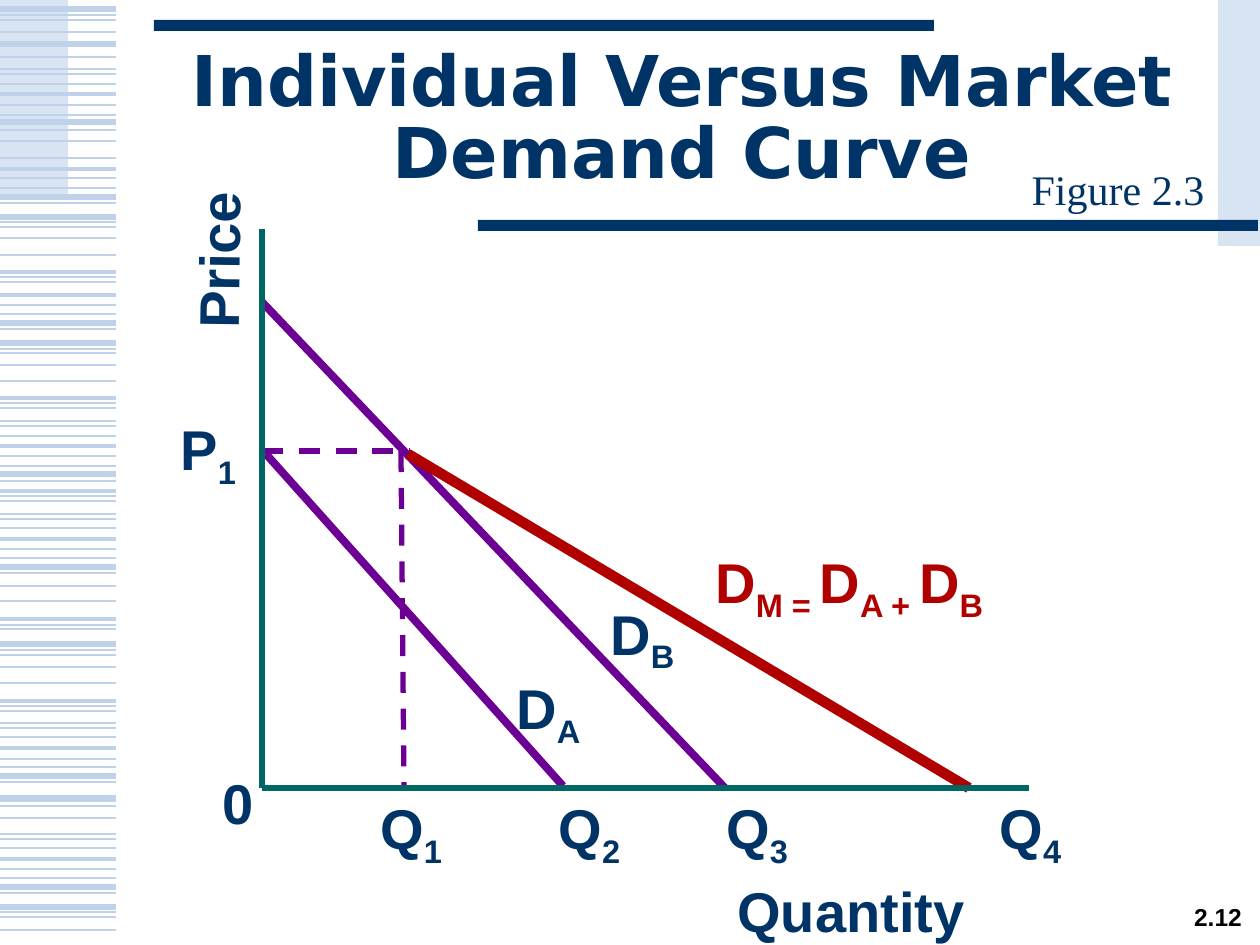
from lxml.etree import SubElement
from pptx import Presentation
from pptx.dml.color import RGBColor
from pptx.enum.dml import MSO_LINE
from pptx.enum.shapes import MSO_CONNECTOR, MSO_SHAPE
from pptx.enum.text import MSO_ANCHOR, PP_ALIGN
from pptx.oxml.ns import qn
from pptx.util import Pt

NAVY, PALE, STRIPE = "003366", "D9E4F3", "C0D2EA"
PURPLE, RED, TEAL = "6D0094", "B00000", "006666"

STRIPES = {
    3: [9, 44, 122, 197, 217, 323, 343, 474, 567, 644, 776, 798, 887, 907],
    2.25: [94, 169, 272, 295, 398, 446, 491, 539, 619, 701, 748, 859],
    1.5: [57, 74, 105, 130, 178, 203, 282, 305, 329, 408, 426, 456, 481,
          501, 519, 549, 573, 629, 711, 728, 759, 782, 839, 869, 893],
    1: [20, 32, 84, 141, 158, 227, 238, 255, 353, 365, 381, 436, 528, 586,
        601, 655, 667, 683, 737, 806, 818, 834, 848, 917, 930],
    0.75: [15, 69, 115, 188, 222, 277, 314, 349, 403, 421, 466, 496, 514,
           558, 625, 650, 706, 723, 767, 801, 878, 912],
}
BARS = [
    (0, 0, 68, 200, PALE),
    (154, 20, 780, 11, NAVY),
    (1218, 0, 42, 246, PALE),
    (478, 220, 780, 11, NAVY),
]
CURVE_LABELS = [
    (598, 588, 105, ["D", "B"], NAVY),
    (504, 662, 116, ["D", "A"], NAVY),
    (725, 866, 315, ["Quantity"], NAVY),
    (703, 536, 388, ["D", "M = ", "D", "A + ", "D", "B"], RED),
]
QUANTITY_LEFTS = [368, 546, 714, 987]


def px(n):
    """Turn pixels into EMU."""
    return round(n * 914400 / 126)


def color(value):
    """Turn a hex string into a colour."""
    return RGBColor.from_string(value)


def add_bar(shapes, x, y, w, h, fill):
    """Add a plain filled rectangle."""
    sp = shapes.add_shape(MSO_SHAPE.RECTANGLE, px(x), px(y), px(w), px(h))
    sp.shadow.inherit = False
    sp.fill.solid()
    sp.fill.fore_color.rgb = color(fill)
    sp.line.fill.background()


def add_line(shapes, x1, y1, x2, y2, stroke, width, dashed=False):
    """Add a straight line without a shadow."""
    cn = shapes.add_connector(MSO_CONNECTOR.STRAIGHT, px(x1), px(y1), px(x2), px(y2))
    cn.line.color.rgb = color(stroke)
    cn.line.width = Pt(width)
    if dashed:
        cn.line.dash_style = MSO_LINE.DASH
    SubElement(cn._element.spPr, qn("a:effectLst"))


def add_text(shapes, x, y, w, h, runs, size, font, ink=NAVY, bold=True,
             align=PP_ALIGN.CENTER, anchor=MSO_ANCHOR.MIDDLE, wrap=True, spacing=None):
    """Add a text box whose every second run is a subscript."""
    sp = shapes.add_textbox(px(x), px(y), px(w), px(h))
    tf = sp.text_frame
    tf.word_wrap = wrap
    tf.vertical_anchor = anchor
    p = tf.paragraphs[0]
    p.alignment = align
    p.line_spacing = spacing
    for i, text in enumerate(runs):
        r = p.add_run()
        r.text = text
        r.font.size = Pt(size)
        r.font.name = font
        r.font.bold = bold
        r.font.color.rgb = color(ink)
        if i % 2:
            r.font._element.set("baseline", "-25000")
    return sp


def add_label(shapes, x, y, w, runs, ink=NAVY):
    """Add a bold label of the diagram."""
    sp = add_text(shapes, x, y, w, 79, runs, 32, "Arial", ink,
                  align=PP_ALIGN.LEFT, anchor=MSO_ANCHOR.TOP)
    sp.text_frame.margin_top = px(11)
    return sp


def add_background(shapes):
    """Add the bars, the slide number and the striped margin."""
    for bar in BARS:
        add_bar(shapes, *bar)
    add_text(shapes, 1176, 903, 84, 34, ["2.12"], 14, "Arial", "000000",
             wrap=False, spacing=0.7)
    stripes = shapes.add_group_shape().shapes
    for width, tops in STRIPES.items():
        for y in tops:
            add_line(stripes, 0, y, 116, y, STRIPE, width)


def add_curves(shapes):
    """Add the demand curves with their guides and labels."""
    add_line(shapes, 266, 454, 563, 786, PURPLE, 4.5)
    add_line(shapes, 401, 451, 404, 788, PURPLE, 3, dashed=True)
    add_line(shapes, 262, 451, 410, 451, PURPLE, 3, dashed=True)
    add_line(shapes, 262, 302, 725, 788, PURPLE, 4.5)
    add_line(shapes, 408, 454, 969, 788, RED, 6)
    for label in CURVE_LABELS:
        add_label(shapes, *label)


def add_axes(shapes):
    """Add the axes with their labels."""
    axes = shapes.add_group_shape().shapes
    add_line(axes, 262, 229, 262, 788, TEAL, 3)
    add_line(axes, 262, 788, 1029, 788, TEAL, 3)
    add_label(axes, 110, 199, 205, ["Price"]).rotation = 270.8
    add_label(axes, 168, 403, 84, ["P", "1"])
    add_label(axes, 210, 757, 42, ["0"])
    for number, x in enumerate(QUANTITY_LEFTS, 1):
        add_label(axes, x, 782, 94, ["Q", str(number)])


def main():
    """Build the slide and save it."""
    prs = Presentation()
    prs.slide_width, prs.slide_height = px(1260), px(945)
    shapes = prs.slides.add_slide(prs.slide_layouts[6]).shapes
    add_background(shapes)
    add_text(shapes, 158, 42, 1048, 158, ["Individual Versus Market Demand Curve"],
             40, "DejaVu Sans", spacing=0.85)
    add_curves(shapes)
    add_text(shapes, 1008, 168, 220, 42, ["Figure 2.3"], 24, "Times New Roman",
             bold=False, wrap=False)
    add_axes(shapes)
    prs.save("out.pptx")


if __name__ == "__main__":
    main()
